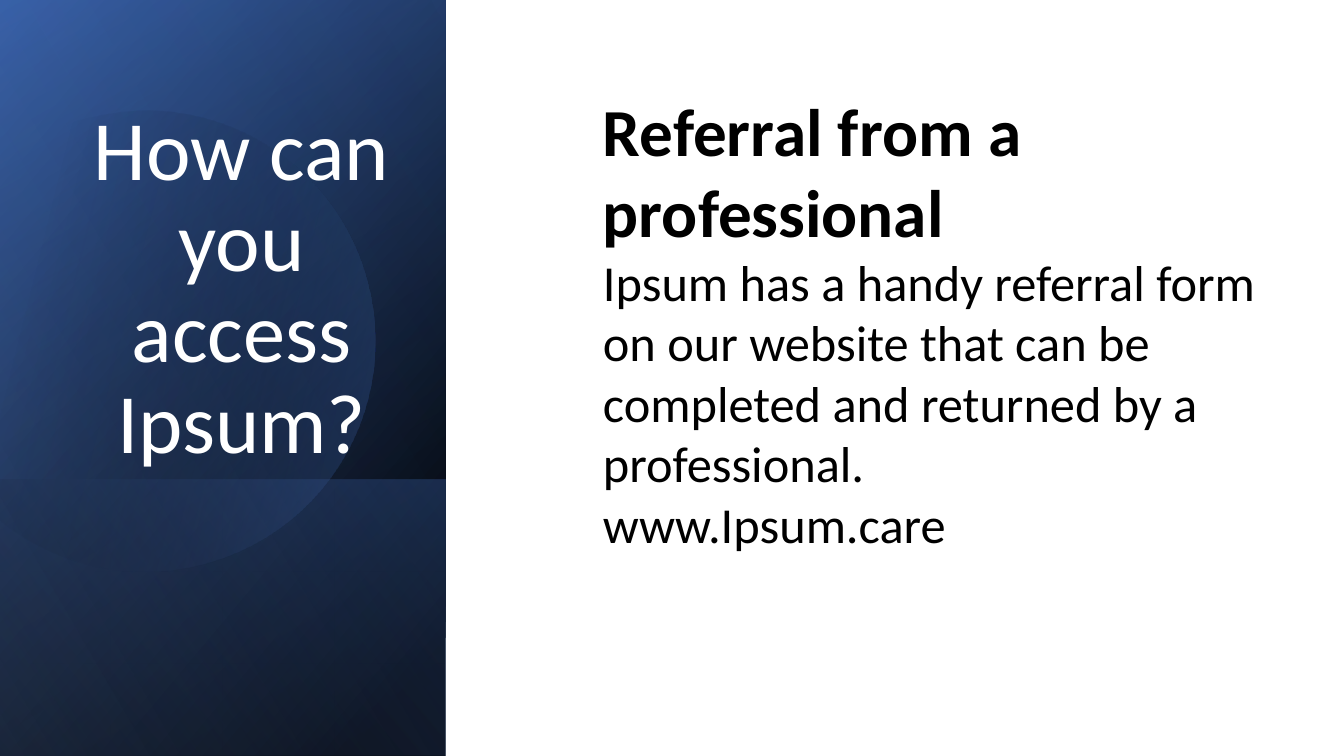
"""Build a slide with a blue gradient side panel, a title and referral details."""
import math

from lxml import etree
from pptx import Presentation
from pptx.dml.color import RGBColor
from pptx.enum import shapes, text
from pptx.oxml.ns import qn
from pptx.util import Cm, Pt

HUES = {"black": "000000", "white": "FFFFFF", "navy": "2F5597",
        "blue": "4472C4", "pale": "8FAADC"}
FONT = "Calibri"
TITLE = "How can you access Ipsum?"
BODY = [
    ("Referral from a professional", 48, True),
    ("Ipsum has a handy referral form on our website that can be "
     "completed and returned by a professional.", 36, False),
    ("www.Ipsum.care", 36, False),
]

WIDE, HIGH, SIDE = 33.87, 19.05, 11.23
BASE = [
    (HIGH, [(8, "black", 100), (100, "navy", 100)], 50),
    (HIGH, [(0, "black", 0), (99, "blue", 46)], 30),
    (6.96, [(2, "blue", 29), (100, "black", 30)], 130),
]
GLOW = (HIGH, [(0, "black", 0), (99, "pale", 11)], 120)

DISC_FILL = [(29, "black", 0), (100, "blue", 43)]
DISC_MID, DISC_TURN = (4.03, 8.5), -16.1
START = (3.78, 2.79)
EDGE = [
    [(6.25, 2.84), (8.51, 4.5), (9.22, 6.99)],
    [(10.11, 10.08), (8.33, 13.28), (5.26, 14.17)],
    [(3.33, 14.73), (1.35, 14.25), (-0.08, 13.06)],
    [(-0.38, 12.78)],
    [(-0.38, 4.45)],
    [(0, 4.09)],
    [(0.58, 3.61), (1.27, 3.25), (2.03, 3.02)],
    [(2.62, 2.87), (3.2, 2.79), START],
]
STEPS = 24


def color(name):
    return RGBColor.from_string(HUES[name])


def shade(shape, stops, angle):
    shape.shadow.inherit = False
    shape.line.fill.background()
    fill = shape.fill
    fill.gradient()
    fill.gradient_angle = 360 - angle
    for stop, (place, name, _) in zip(fill.gradient_stops, stops):
        stop.position = place / 100
        stop.color.rgb = color(name)
    marks = shape.element.spPr.iter(qn("a:gs"))
    for mark, (_, _, alpha) in zip(marks, stops):
        etree.SubElement(mark[0], qn("a:alpha")).set("val", str(alpha * 1000))


def panel(slide, span, stops, angle):
    left, top = (SIDE - span) / 2, HIGH - (span + SIDE) / 2
    shape = slide.shapes.add_shape(shapes.MSO_SHAPE.RECTANGLE, Cm(left),
                                   Cm(top), Cm(span), Cm(SIDE))
    shape.rotation = 90
    shape.element.spPr.find(qn("a:xfrm")).set("flipH", "1")
    shade(shape, stops, angle)


def bezier(nodes, t):
    rate = [(1 - t) ** 3, 3 * t * (1 - t) ** 2, 3 * t * t * (1 - t), t ** 3]
    return tuple(sum(r * n[i] for r, n in zip(rate, nodes)) for i in (0, 1))


def unturn(point):
    turn = math.radians(-DISC_TURN)
    x, y = point[0] - DISC_MID[0], point[1] - DISC_MID[1]
    return (Cm(DISC_MID[0] + x * math.cos(turn) - y * math.sin(turn)),
            Cm(DISC_MID[1] + x * math.sin(turn) + y * math.cos(turn)))


def disc(slide):
    points = [START]
    for part in EDGE:
        if len(part) == 1:
            points += part
        else:
            nodes = [points[-1]] + part
            points += [bezier(nodes, i / STEPS) for i in range(1, STEPS + 1)]
    first, *rest = [unturn(p) for p in points]
    pen = slide.shapes.build_freeform(*first)
    pen.add_line_segments(rest, close=True)
    shape = pen.convert_to_shape()
    shape.rotation = DISC_TURN
    shade(shape, DISC_FILL, 30)


def place(holder, left, top, width, height):
    holder.left, holder.top = Cm(left), Cm(top)
    holder.width, holder.height = Cm(width), Cm(height)
    holder.element.getparent().append(holder.element)
    frame = holder.text_frame
    frame.word_wrap = True
    frame.auto_size = text.MSO_AUTO_SIZE.NONE
    return frame


def write(para, words, size, bold, name):
    run = para.add_run()
    run.text = words
    run.font.name, run.font.size, run.font.bold = FONT, Pt(size), bold
    run.font.color.rgb = color(name)


def title(slide):
    frame = place(slide.shapes.title, 1.32, 0.03, 9.53, 18.57)
    frame.vertical_anchor = text.MSO_ANCHOR.BOTTOM
    frame.margin_left = frame.margin_right = Cm(0.5)
    frame.margin_bottom = Cm(6.7)
    para = frame.paragraphs[0]
    para.alignment = text.PP_ALIGN.CENTER
    para.line_spacing = 0.9
    write(para, TITLE, 60.3, False, "white")


def body(slide):
    frame = place(slide.placeholders[1], 14.94, 2.13, 18.47, 13.26)
    frame.vertical_anchor = text.MSO_ANCHOR.TOP
    for i, (words, size, bold) in enumerate(BODY):
        para = frame.add_paragraph() if i else frame.paragraphs[0]
        para.alignment = text.PP_ALIGN.LEFT
        para.space_before = para.space_after = Pt(0)
        props = para._p.get_or_add_pPr()
        props.set("marL", "0")
        props.set("indent", "0")
        etree.SubElement(props, qn("a:buNone"))
        write(para, words, size, bold, "black")


def main():
    deck = Presentation()
    deck.slide_width, deck.slide_height = Cm(WIDE), Cm(HIGH)
    slide = deck.slides.add_slide(deck.slide_layouts[1])
    for spec_row in BASE:
        panel(slide, *spec_row)
    disc(slide)
    panel(slide, *GLOW)
    title(slide)
    body(slide)
    deck.save("out.pptx")


if __name__ == "__main__":
    main()
